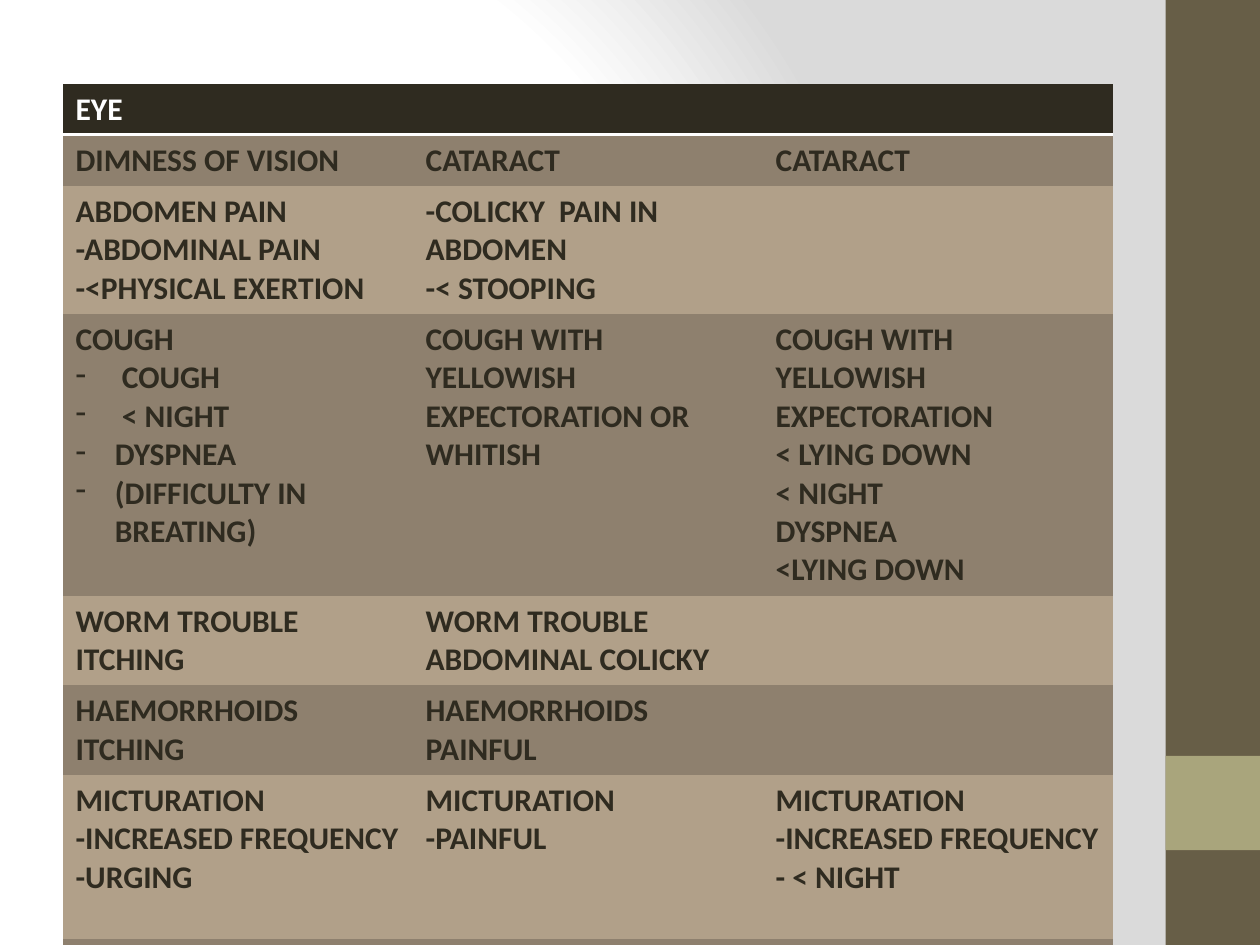
from pptx import Presentation, util as u
from pptx.dml.color import RGBColor
from pptx.enum import shapes
from pptx.oxml import parse_xml
from pptx.oxml.ns import nsdecls, qn

WHITE = RGBColor(0xFF, 0xFF, 0xFF)
PALE_GREY = RGBColor(0xDA, 0xDA, 0xDA)
OLIVE = RGBColor(0x67, 0x5E, 0x47)
SAGE = RGBColor(0xA9, 0xA5, 0x7C)
DARK = RGBColor(0x2F, 0x2B, 0x20)
BROWN = RGBColor(0x8E, 0x80, 0x6E)
TAN = RGBColor(0xB1, 0xA0, 0x89)

NO_STYLE_NO_GRID = "{2D5ABB26-0587-4C30-8999-92F81FD0307C}"
BULLET = "• "  # marks a line that gets a dash bullet

ROW_HEIGHTS = [1.02, 1.02, 2.54, 5.57, 1.78, 1.78, 3.3, 1.02]
ROWS = [
    ["EYE", "", ""],
    ["DIMNESS OF VISION", "CATARACT", "CATARACT"],
    ["ABDOMEN PAIN\n-ABDOMINAL PAIN\n-<PHYSICAL EXERTION",
     "-COLICKY  PAIN IN ABDOMEN\n-< STOOPING", ""],
    ["COUGH\n•  COUGH\n•  < NIGHT\n• DYSPNEA\n• (DIFFICULTY IN BREATING)",
     "COUGH WITH YELLOWISH EXPECTORATION OR WHITISH",
     "COUGH WITH YELLOWISH EXPECTORATION\n< LYING DOWN\n< NIGHT\nDYSPNEA\n<LYING DOWN"],
    ["WORM TROUBLE\nITCHING", "WORM TROUBLE\nABDOMINAL COLICKY", ""],
    ["HAEMORRHOIDS\nITCHING", "HAEMORRHOIDS\nPAINFUL", ""],
    ["MICTURATION\n-INCREASED FREQUENCY\n-URGING", "MICTURATION\n-PAINFUL",
     "MICTURATION\n-INCREASED FREQUENCY\n- < NIGHT"],
    ["", "", ""],
]


class SlideBuilder:
    font_name = "Calibri"
    font_size = u.Pt(18)

    def __init__(self, slide):
        self.slide = slide

    def background(self, inner, outer):
        """Radial gradient that keeps the inner colour for three quarters."""
        self.slide.background.fill.gradient()
        gradient = self.slide.element.find(".//" + qn("a:gradFill"))
        stops = "".join(
            f'<a:gs pos="{position * 1000}"><a:srgbClr val="{color}"/></a:gs>'
            for position, color in [(0, inner), (75, inner), (100, outer)])
        gradient.getparent().replace(gradient, parse_xml(
            f'<a:gradFill {nsdecls("a")} rotWithShape="1"><a:gsLst>{stops}</a:gsLst>'
            '<a:path path="circle"><a:fillToRect l="20000" t="50000" r="100000" b="50000"/>'
            '</a:path></a:gradFill>'))

    def rectangle(self, left, top, width, height, color):
        shape = self.slide.shapes.add_shape(
            shapes.MSO_SHAPE.RECTANGLE, u.Cm(left), u.Cm(top), u.Cm(width), u.Cm(height))
        shape.shadow.inherit = False
        shape.fill.solid()
        shape.fill.fore_color.rgb = color
        shape.line.fill.background()

    def table(self, left, top, width, heights, rows):
        frame = self.slide.shapes.add_table(
            len(rows), len(rows[0]), u.Cm(left), u.Cm(top), u.Cm(width), u.Cm(sum(heights)))
        frame.element.find(".//" + qn("a:tableStyleId")).text = NO_STYLE_NO_GRID
        table = frame.table
        table.horz_banding = False
        for index, (height, texts) in enumerate(zip(heights, rows)):
            table.rows[index].height = u.Cm(height)
            fill = DARK if index == 0 else (TAN, BROWN)[index % 2]
            for column, content in enumerate(texts):
                cell = table.cell(index, column)
                self.cell(cell, content, fill, WHITE if index == 0 else DARK)
                if index == 0:
                    self.bottom_border(cell, WHITE, 2)

    def cell(self, cell, content, fill, color):
        cell.fill.solid()
        cell.fill.fore_color.rgb = fill
        frame = cell.text_frame
        for index, line in enumerate(content.split("\n")):
            paragraph = frame.add_paragraph() if index else frame.paragraphs[0]
            paragraph.font.name = self.font_name
            paragraph.font.size = self.font_size
            paragraph.font.bold = True
            paragraph.font.color.rgb = color
            if line:
                paragraph.add_run().text = line.removeprefix(BULLET)
            if line.startswith(BULLET):
                self.dash_bullet(paragraph)

    def dash_bullet(self, paragraph):
        properties = paragraph._p.get_or_add_pPr()
        indent = u.Cm(0.79)
        properties.set("marL", str(indent))
        properties.set("indent", str(-indent))
        properties.insert(0, parse_xml(f'<a:buChar {nsdecls("a")} char="-"/>'))

    def bottom_border(self, cell, color, points):
        cell._tc.get_or_add_tcPr().insert(0, parse_xml(
            f'<a:lnB {nsdecls("a")} w="{u.Pt(points)}"><a:solidFill>'
            f'<a:srgbClr val="{color}"/></a:solidFill></a:lnB>'))


def main():
    presentation = Presentation()
    presentation.slide_width = u.Cm(25.4)
    presentation.slide_height = u.Cm(19.05)
    builder = SlideBuilder(presentation.slides.add_slide(presentation.slide_layouts[6]))
    builder.background(WHITE, PALE_GREY)
    builder.rectangle(23.5, 0, 1.9, 19.05, OLIVE)
    builder.rectangle(23.5, 15.24, 1.9, 1.9, SAGE)
    builder.table(1.27, 1.69, 21.17, ROW_HEIGHTS, ROWS)
    presentation.save("out.pptx")


if __name__ == "__main__":
    main()
